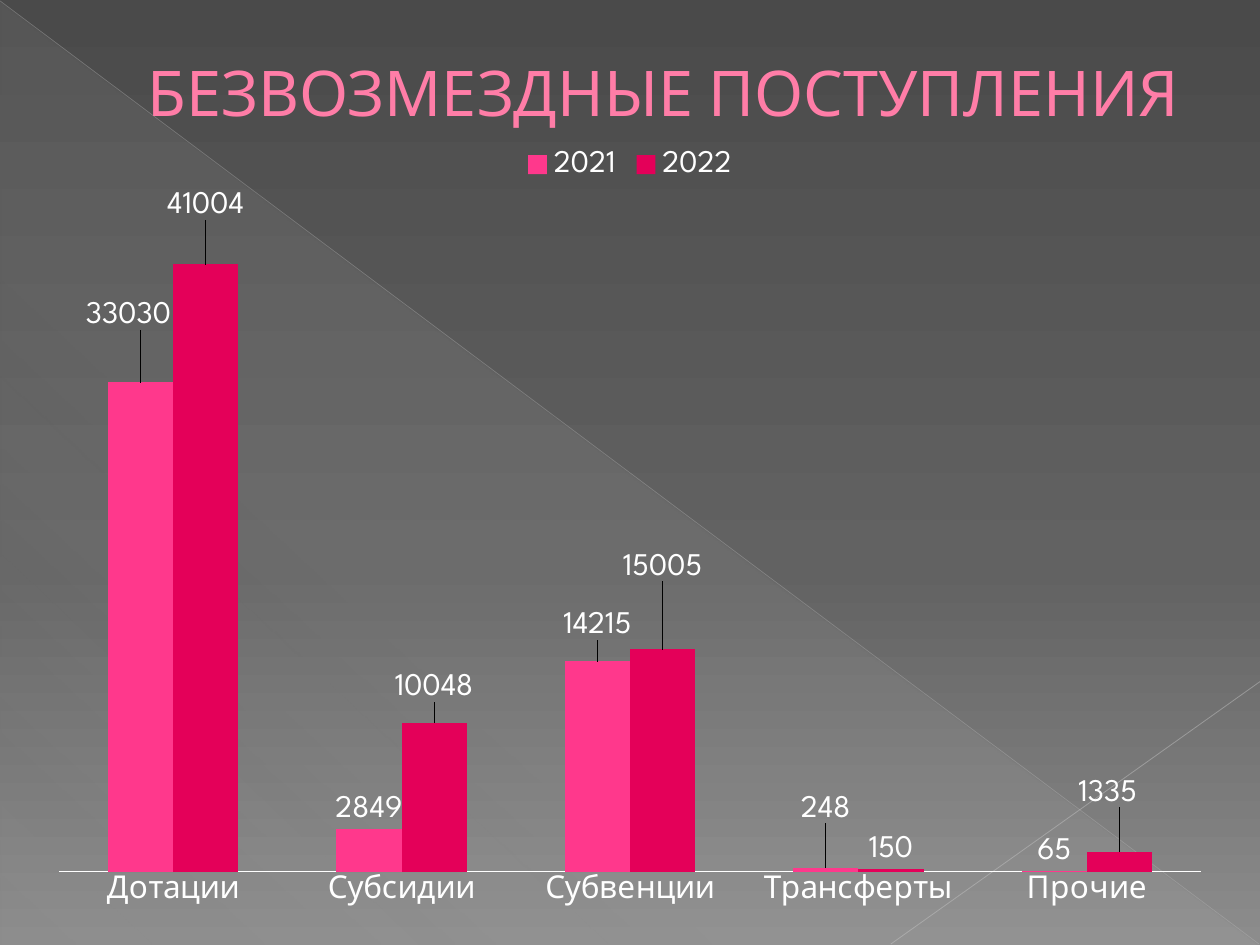
"""Build a slide with a clustered column chart of grants by kind and year."""
from dataclasses import dataclass

from lxml import etree
from pptx import Presentation
from pptx.chart.data import CategoryChartData
from pptx.dml.color import RGBColor
from pptx.enum.chart import XL_CHART_TYPE, XL_LABEL_POSITION, XL_LEGEND_POSITION, XL_TICK_MARK
from pptx.enum.shapes import MSO_CONNECTOR, MSO_SHAPE
from pptx.enum.text import MSO_ANCHOR, PP_ALIGN
from pptx.oxml.ns import qn
from pptx.util import Pt

COLUMNS = XL_CHART_TYPE.COLUMN_CLUSTERED
OUTSIDE = XL_LABEL_POSITION.OUTSIDE_END
LEGEND_TOP = XL_LEGEND_POSITION.TOP
NO_TICK = XL_TICK_MARK.NONE
STRAIGHT = MSO_CONNECTOR.STRAIGHT
TRIANGLE = MSO_SHAPE.RIGHT_TRIANGLE
MIDDLE = MSO_ANCHOR.MIDDLE
CENTER = PP_ALIGN.CENTER
FONT = "League Spartan"
WHITE = "FFFFFF"


@dataclass
class Stop:
    pos: int
    color: str
    alpha: int = 100


@dataclass
class Line:
    start: tuple
    end: tuple
    color: str
    width: float
    alpha: int


@dataclass
class Series:
    name: str
    color: str
    values: tuple
    shifts: dict


BACKGROUND = [Stop(0, "4A4A4A"), Stop(60, "626262"), Stop(100, "8C8C8C")]
SHEEN = [Stop(0, "D2D2D2", 10), Stop(70, "D2D2D2", 8), Stop(100, "D2D2D2", 1)]
LINES = [
    Line((0, 0.5), (719.5, 539.5), "BFBFBF", 0.39, 35),
    Line((720, 389.5), (509, 539.5), "C6C6C6", 0.47, 45),
]
CATEGORIES = ["Дотации", "Субсидии", "Субвенции", "Трансферты", "Прочие"]
SERIES = [
    Series("2021", "FF388C", (33030, 2849, 14215, 248, 65),
           {0: (-0.01, -0.06), 2: (0, -0.02), 3: (0, -0.05)}),
    Series("2022", "E40059", (41004, 10048, 15005, 150, 1335),
           {0: (0, -0.05), 1: (0, -0.02), 2: (0, -0.08), 4: (-0.01, -0.05)}),
]


def rgb(color: str) -> RGBColor:
    return RGBColor.from_string(color)


def add_color(parent, color: str, alpha: int = 100) -> None:
    clr = etree.SubElement(parent, qn("a:srgbClr"), val=color)
    if alpha < 100:
        etree.SubElement(clr, qn("a:alpha"), val=str(alpha * 1000))


def set_gradient(fill, element, stops: list, angle: int) -> None:
    fill.gradient()
    fill.gradient_angle = 360 - angle
    stop_list = element.find(".//" + qn("a:gsLst"))
    for old in list(stop_list):
        stop_list.remove(old)
    for stop in stops:
        gs = etree.SubElement(stop_list, qn("a:gs"), pos=str(stop.pos * 1000))
        add_color(gs, stop.color, stop.alpha)


def add_line(s, line: Line) -> None:
    cxn = s.shapes.add_connector(STRAIGHT, *map(Pt, line.start + line.end))
    cxn.line.width = Pt(line.width)
    cxn.line.color.rgb = rgb(line.color)
    clr = cxn.element.spPr.find(".//" + qn("a:srgbClr"))
    etree.SubElement(clr, qn("a:alpha"), val=str(line.alpha * 1000))
    etree.SubElement(cxn.element.spPr, qn("a:effectLst"))


def add_backdrop(s) -> None:
    set_gradient(s.background.fill, s.element, BACKGROUND, 90)
    sp = s.shapes.add_shape(TRIANGLE, Pt(0.5), Pt(1), Pt(719), Pt(539))
    sp.shadow.inherit = False
    sp.line.fill.background()
    set_gradient(sp.fill, sp.element, SHEEN, 133)
    for line in LINES:
        add_line(s, line)


def format_title(s, text: str) -> None:
    sp = s.shapes.title
    sp.left, sp.top, sp.width, sp.height = Pt(36), Pt(21), Pt(648), Pt(62)
    tf = sp.text_frame
    tf.text = text
    tf.word_wrap = True
    tf.vertical_anchor = MIDDLE
    p = tf.paragraphs[0]
    p.alignment = CENTER
    p._p.get_or_add_pPr().set("marL", str(Pt(38)))
    r = p.runs[0]
    r.font.size, r.font.name = Pt(36), FONT
    r.font.color.rgb = rgb("FF7DA7")
    outline = etree.Element(qn("a:ln"), w=str(Pt(0.5)))
    add_color(etree.SubElement(outline, qn("a:solidFill")), "B12761")
    r.font._element.insert(0, outline)
    sp.element.getparent().append(sp.element)


def add_layout(parent, index: int, **values) -> None:
    layout = etree.Element(qn("c:layout"))
    manual = etree.SubElement(layout, qn("c:manualLayout"))
    for tag, value in values.items():
        etree.SubElement(manual, qn("c:" + tag), val=str(value))
    parent.insert(index, layout)


def format_series(series, data: Series) -> None:
    series.format.fill.solid()
    series.format.fill.fore_color.rgb = rgb(data.color)
    labels = series.data_labels
    labels.show_value = True
    labels.position = OUTSIDE
    for i, (x, y) in data.shifts.items():
        series.points[i].data_label.position = OUTSIDE
        item = labels._element.findall(qn("c:dLbl"))[-1]
        add_layout(item, 1, x=x, y=y)


def add_columns(s) -> None:
    data = CategoryChartData()
    data.categories = CATEGORIES
    for series in SERIES:
        data.add_series(series.name, series.values)
    frame = s.shapes.add_chart(COLUMNS, Pt(20), Pt(77), Pt(680), Pt(448), data)
    chart = frame.chart
    chart.has_title = False
    chart.font.size, chart.font.name = Pt(18), FONT
    chart.font.color.rgb = rgb(WHITE)
    chart.has_legend = True
    chart.legend.position = LEGEND_TOP
    chart.legend.include_in_layout = False
    axis = chart.category_axis
    axis.major_tick_mark = NO_TICK
    axis.format.line.color.rgb = rgb(WHITE)
    axis.format.line.width = Pt(0.75)
    values = chart.value_axis
    values.minimum_scale, values.maximum_scale = 0, 45000
    values.has_major_gridlines = False
    values.visible = False
    plot = chart.plots[0]
    plot.gap_width, plot.overlap = 150, 0
    plot.vary_by_categories = False
    for series, item in zip(plot.series, SERIES):
        format_series(series, item)
    area = chart._chartSpace.find(".//" + qn("c:plotArea"))
    for old in area.findall(qn("c:layout")):
        area.remove(old)
    add_layout(area, 0, layoutTarget="inner", xMode="edge", yMode="edge",
               x=0.02, y=0.09, w=0.96, h=0.85)


def main() -> None:
    prs = Presentation()
    prs.slide_width, prs.slide_height = Pt(720), Pt(540)
    s = prs.slides.add_slide(prs.slide_layouts[5])
    add_backdrop(s)
    format_title(s, "БЕЗВОЗМЕЗДНЫЕ ПОСТУПЛЕНИЯ")
    add_columns(s)
    prs.save("out.pptx")


if __name__ == "__main__":
    main()
